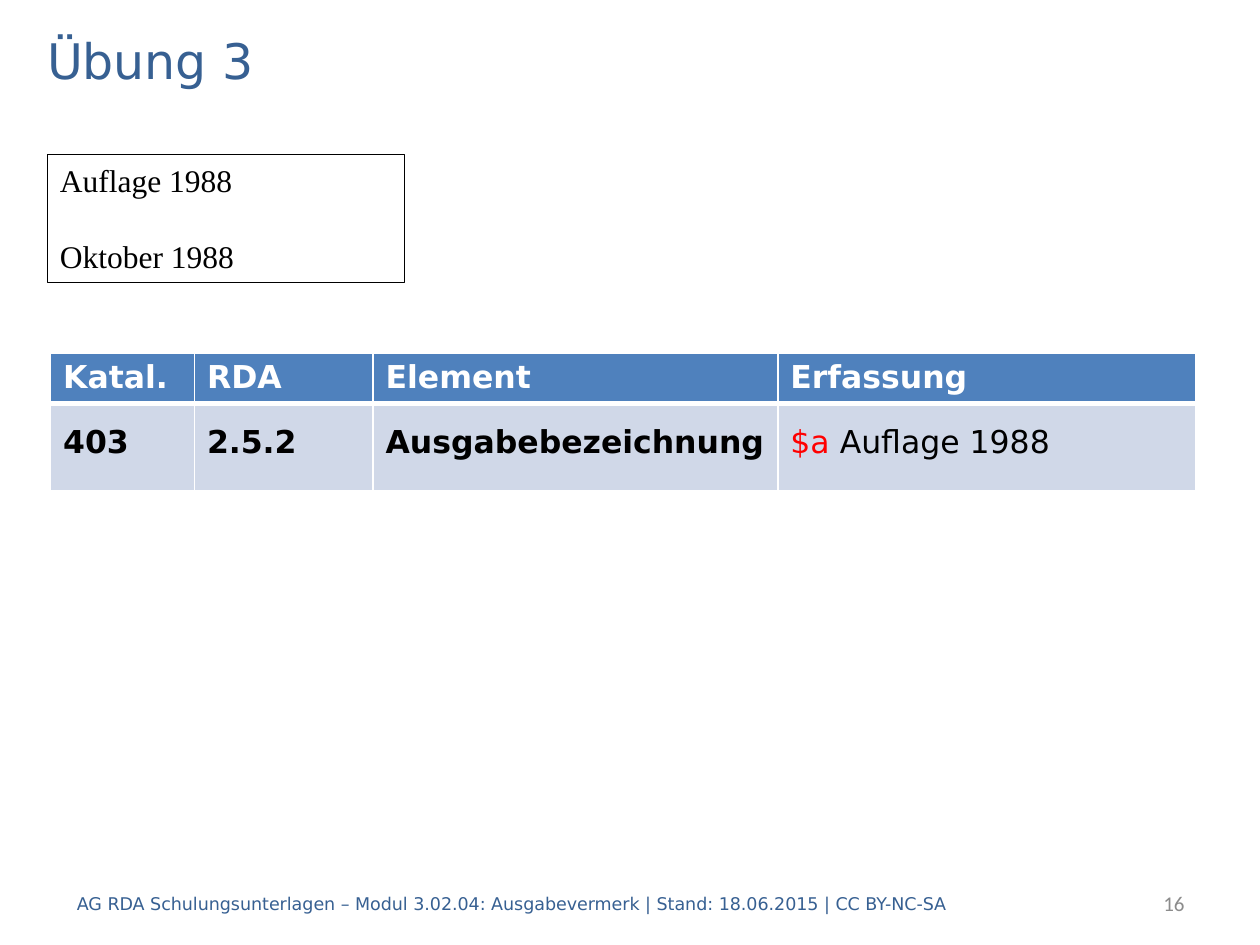
from lxml.etree import SubElement
from pptx import Presentation
from pptx.dml.color import RGBColor
from pptx.enum.shapes import MSO_SHAPE
from pptx.enum.text import MSO_ANCHOR, PP_ALIGN
from pptx.oxml.ns import qn
from pptx.util import Cm, Pt

COLORS = {
    "title": "376092",
    "header": "4F81BD",
    "body": "D0D8E8",
    "white": "FFFFFF",
    "black": "000000",
    "code": "FF0000",
    "number": "8C8C8C",
}


class SlideBuilder:
    font = "DejaVu Sans"

    def __init__(self, prs):
        self.s = prs.slides.add_slide(prs.slide_layouts[6])

    def color(self, name):
        return RGBColor.from_string(COLORS[name])

    def style(self, p, size, color, font=None, bold=False):
        p.font.name = font or self.font
        p.font.size = Pt(size)
        p.font.bold = bold
        p.font.color.rgb = self.color(color)

    def text(self, box, text, size, color, font=None, align=PP_ALIGN.LEFT):
        sp = self.s.shapes.add_textbox(*map(Cm, box))
        tf = sp.text_frame
        tf.word_wrap = True
        tf.vertical_anchor = MSO_ANCHOR.MIDDLE
        p = tf.paragraphs[0]
        p.text = text
        p.alignment = align
        self.style(p, size, color, font)

    def framed_text(self, box, lines, size, font, gap):
        sp = self.s.shapes.add_shape(MSO_SHAPE.RECTANGLE, *map(Cm, box))
        sp.shadow.inherit = False
        sp.fill.solid()
        sp.fill.fore_color.rgb = self.color("white")
        sp.line.color.rgb = self.color("black")
        sp.line.width = Pt(0.75)
        tf = sp.text_frame
        tf.word_wrap = True
        tf.vertical_anchor = MSO_ANCHOR.TOP
        tf.text = "\n".join(lines)
        for i, p in enumerate(tf.paragraphs):
            p.alignment = PP_ALIGN.LEFT
            p.space_before = Pt(gap if i else 0)
            self.style(p, size, "black", font)

    def borders(self, cell, top, bottom):
        tcPr = cell._tc.get_or_add_tcPr()
        widths = {"a:lnL": 1, "a:lnR": 1, "a:lnT": top, "a:lnB": bottom}
        for i, (tag, width) in enumerate(widths.items()):
            ln = SubElement(tcPr, qn(tag), w=str(Pt(width)))
            fill = SubElement(ln, qn("a:solidFill"))
            SubElement(fill, qn("a:srgbClr"), val=COLORS["white"])
            tcPr.insert(i, ln)

    def cell(self, cell, fill):
        cell.fill.solid()
        cell.fill.fore_color.rgb = self.color(fill)
        return cell.text_frame.paragraphs[0]

    def table(self, box, widths, heights, header, values):
        shape = self.s.shapes.add_table(2, len(widths), *map(Cm, box))
        table = shape.table
        table.horz_banding = False
        for column, width in zip(table.columns, widths):
            column.width = Cm(width)
        for row, height in zip(table.rows, heights):
            row.height = Cm(height)
        for i, (title, runs) in enumerate(zip(header, values)):
            head, body = table.cell(0, i), table.cell(1, i)
            p = self.cell(head, "header")
            p.text = title
            self.style(p, 18, "white", bold=True)
            self.borders(head, 1, 3)
            p = self.cell(body, "body")
            body.vertical_anchor = MSO_ANCHOR.MIDDLE
            p.line_spacing = Pt(16)
            p.space_before = p.space_after = Pt(6)
            self.style(p, 18, "black", bold=len(runs) == 1)
            for text, color in runs:
                r = p.add_run()
                r.text = text
                r.font.color.rgb = self.color(color)
            self.borders(body, 3, 1)


def main():
    prs = Presentation()
    prs.slide_width, prs.slide_height = Cm(25.4), Cm(19.05)
    slide = SlideBuilder(prs)
    slide.text((0.7, 0.5, 24, 1.42), "Übung 3", 28, "title")
    slide.text(
        (1.3, 17.7, 21.2, 1.02),
        "AG RDA Schulungsunterlagen – Modul 3.02.04: Ausgabevermerk"
        " | Stand: 18.06.2015 | CC BY-NC-SA",
        10, "title",
    )
    slide.table(
        (1.02, 7.12, 23.08, 2.73),
        (2.9, 3.6, 8.16, 8.42),
        (0.98, 1.75),
        ("Katal.", "RDA", "Element", "Erfassung"),
        (
            [("403", "black")],
            [("2.5.2", "black")],
            [("Ausgabebezeichnung", "black")],
            [("$a ", "code"), ("Auflage 1988", "black")],
        ),
    )
    slide.text((20.1, 17.7, 4.03, 1.02), "16", 12, "number", "Calibri", PP_ALIGN.RIGHT)
    slide.framed_text(
        (0.96, 3.12, 7.2, 2.57),
        ("Auflage 1988", "Oktober 1988"),
        18, "Times New Roman", 22,
    )
    prs.save("out.pptx")


if __name__ == "__main__":
    main()
